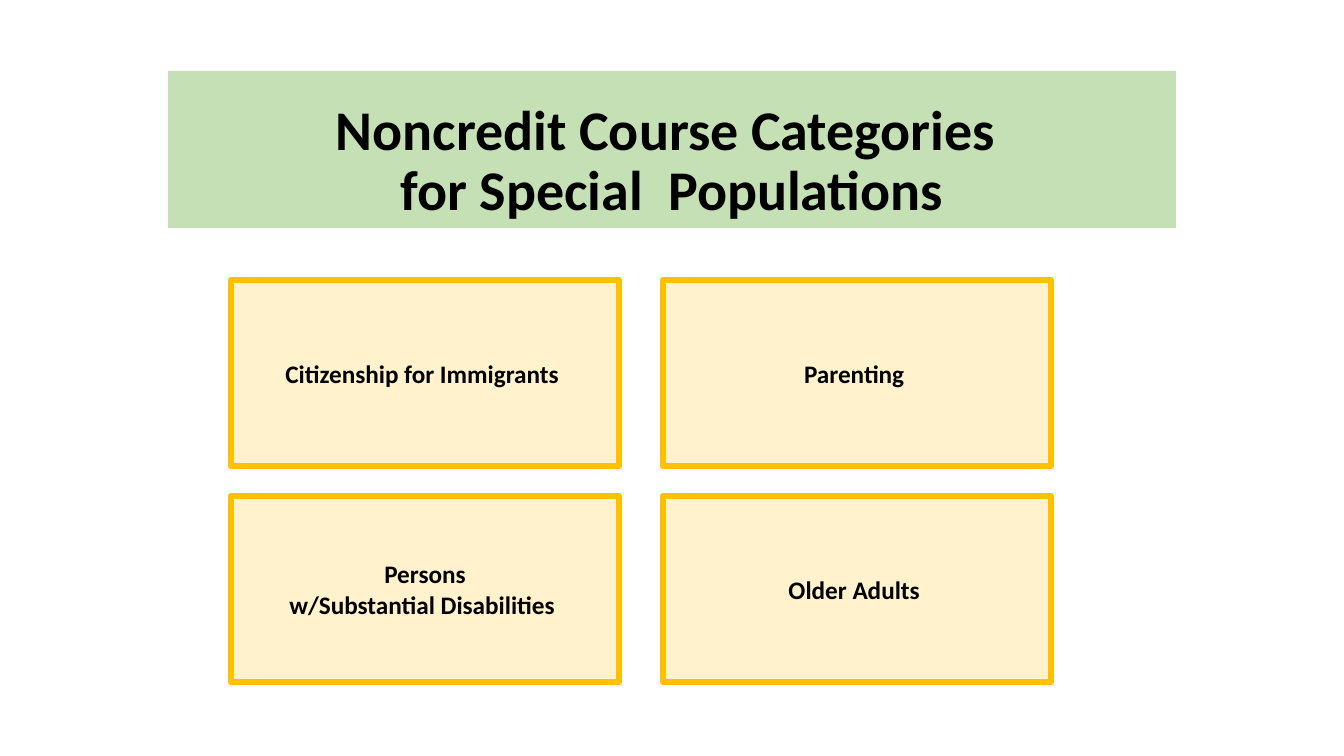
"""Build the slide on noncredit course categories for special populations."""
import pptx
import pptx.dml.color
import pptx.enum.shapes
import pptx.enum.text
import pptx.util

PX = 914400 / 100.8
COLUMN_STEP, ROW_STEP = 432, 216


def color(value):
    return pptx.dml.color.RGBColor.from_string(value)


def write(box, paragraphs, size, anchor, spacing=None):
    frame = box.text_frame
    frame.word_wrap = True
    frame.vertical_anchor = anchor
    for index, text in enumerate(paragraphs):
        para = frame.paragraphs[0] if index == 0 else frame.add_paragraph()
        para.text = text
        para.alignment = pptx.enum.text.PP_ALIGN.CENTER
        para.line_spacing = spacing
        for span in para.runs:
            span.font.name = "Calibri"
            span.font.size = pptx.util.Pt(size)
            span.font.bold = True
            span.font.color.rgb = color("000000")


deck = pptx.Presentation()
deck.slide_width = round(1344 * PX)
deck.slide_height = round(756 * PX)
page = deck.slides.add_slide(deck.slide_layouts[6])

anchors = pptx.enum.text.MSO_ANCHOR
rectangle = pptx.enum.shapes.MSO_SHAPE.RECTANGLE

title = page.shapes.add_shape(rectangle, *(round(side * PX) for side in (168, 71, 1008, 157)))
title.shadow.inherit = False
title.fill.solid()
title.fill.fore_color.rgb = color("C5E0B4")
title.line.fill.background()
write(title, ["Noncredit Course Categories \vfor Special  Populations"],
      size=40, anchor=anchors.BOTTOM, spacing=0.9)

categories = [
    [["Citizenship for Immigrants "], ["Parenting "]],
    [["Persons", "w/Substantial Disabilities "], ["Older Adults "]],
]
for row, cells in enumerate(categories):
    for column, paragraphs in enumerate(cells):
        place = (231 + column * COLUMN_STEP, 280 + row * ROW_STEP, 388, 186)
        card = page.shapes.add_shape(rectangle, *(round(side * PX) for side in place))
        card.shadow.inherit = False
        card.fill.solid()
        card.fill.fore_color.rgb = color("FFF2CC")
        card.line.color.rgb = color("FFC000")
        card.line.width = pptx.util.Pt(4.5)
        write(card, paragraphs, size=18, anchor=anchors.MIDDLE)

deck.save("out.pptx")
